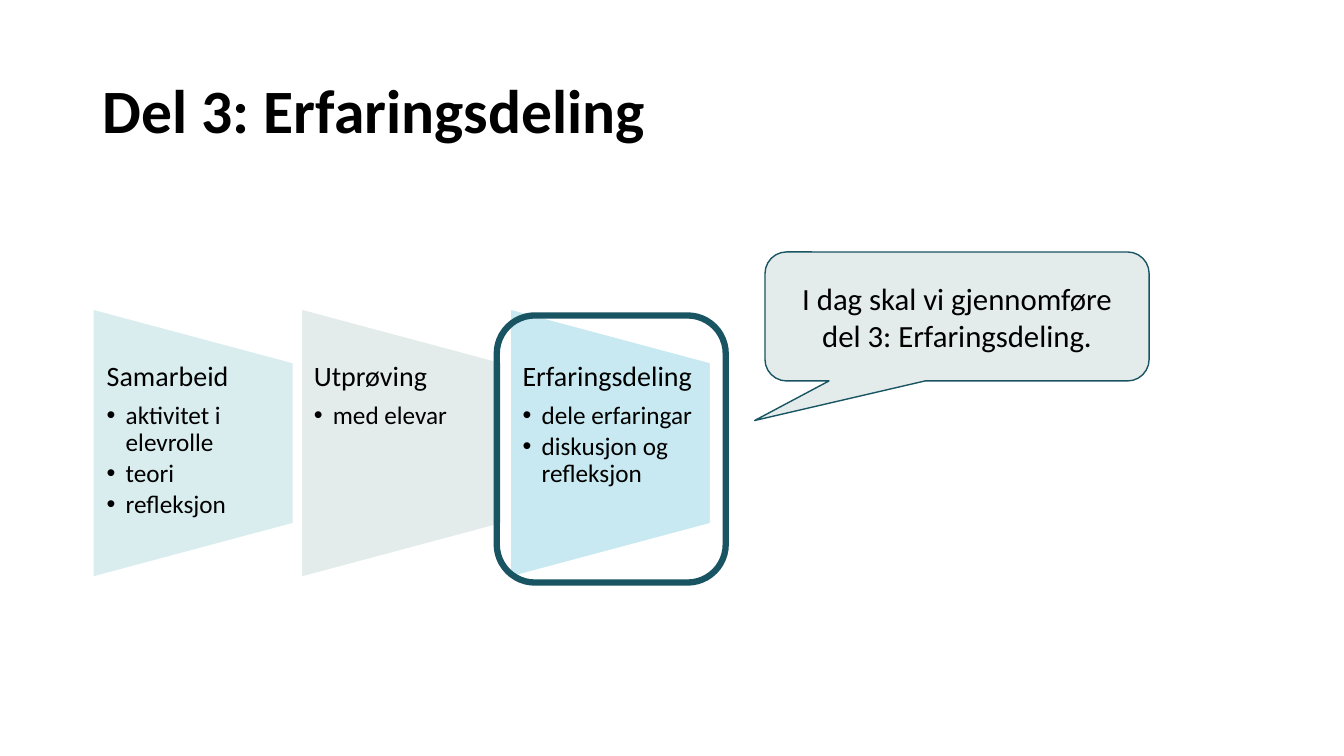
from pptx import Presentation
from pptx.dml.color import RGBColor
from pptx.enum.shapes import MSO_SHAPE
from pptx.enum.text import MSO_ANCHOR, PP_ALIGN
from pptx.oxml.ns import qn
from pptx.util import Cm, Pt
from lxml.etree import SubElement

COLOURS = {
    "text": "000000", "white": "FFFFFF", "outline": "195463",
    "mint": "D9EDEF", "grey": "E3ECEA", "sky": "C8E9F1",
}


def write(paragraph, text, size, bold=False, **layout):
    """Put one formatted run in a paragraph."""
    run = paragraph.add_run()
    run.text = text
    font_format = {"name": "Calibri", "size": Pt(size), "bold": bold}
    for target, values in ((run.font, font_format), (paragraph, layout)):
        for key, value in values.items():
            setattr(target, key, value)
    run.font.color.rgb = RGBColor.from_string(COLOURS["text"])


def draw(kind, box, fill, line, width):
    """Add a preset shape with flat fill and line; box is in cm."""
    shape = slide.shapes.add_shape(kind, *map(Cm, box))
    shape.shadow.inherit = False
    if fill:
        shape.fill.solid()
        shape.fill.fore_color.rgb = RGBColor.from_string(COLOURS[fill])
    else:
        shape.fill.background()
    shape.line.color.rgb = RGBColor.from_string(COLOURS[line])
    shape.line.width = Pt(width)
    return shape


presentation = Presentation()
presentation.slide_width, presentation.slide_height = Cm(33.87), Cm(19.05)
slide = presentation.slides.add_slide(presentation.slide_layouts[5])

# Title
heading = slide.shapes.title
heading_box = {"left": 2.34, "top": 1.02, "width": 29.21, "height": 3.68}
for side, length in heading_box.items():
    setattr(heading, side, Cm(length))
heading.text_frame.vertical_anchor = MSO_ANCHOR.MIDDLE
write(heading.text_frame.paragraphs[0], "Del 3: Erfaringsdeling", 44, bold=True,
      alignment=PP_ALIGN.LEFT, line_spacing=0.9)

# Three phases: a turned trapezoid with a heading and bullets on top
PHASES = [
    ("Samarbeid", ["aktivitet i elevrolle", "teori", "refleksjon"], "mint", 0.35),
    ("Utprøving", ["med elevar"], "grey", 0.31),
    ("Erfaringsdeling", ["dele erfaringar", "diskusjon og refleksjon"], "sky", 0.31),
]
PHASE_LEFT, PHASE_STEP = 2.34, 5.26
PHASE_WIDTH, PHASE_HEIGHT = 5.05, 6.76
TURN_SHIFT = (PHASE_HEIGHT - PHASE_WIDTH) / 2

for index, (phase, activities, colour, inset) in enumerate(PHASES):
    left = PHASE_LEFT + index * PHASE_STEP
    trapezoid = draw(MSO_SHAPE.FLOWCHART_MANUAL_OPERATION,
                     (left - TURN_SHIFT, 8.64, PHASE_HEIGHT, PHASE_WIDTH),
                     colour, "white", 1)
    trapezoid.rotation = 270

    content = slide.shapes.add_textbox(
        Cm(left), Cm(9.14), Cm(PHASE_WIDTH), Cm(4.04)).text_frame
    content_format = {
        "word_wrap": True, "margin_left": Cm(inset), "margin_right": Cm(inset),
        "margin_top": 0, "margin_bottom": 0,
    }
    for key, value in content_format.items():
        setattr(content, key, value)
    write(content.paragraphs[0], phase, 20, line_spacing=0.9, space_after=Pt(7))
    for activity in activities:
        bullet = content.add_paragraph()
        write(bullet, activity, 18, level=1, line_spacing=0.9, space_after=Pt(2.7))
        properties = bullet._p.get_or_add_pPr()
        properties.set("marL", str(Cm(0.48)))
        properties.set("indent", str(-Cm(0.48)))
        SubElement(properties, qn("a:buFont"), typeface="Arial")
        SubElement(properties, qn("a:buChar"), char="•")

# Frame around the current phase
draw(MSO_SHAPE.ROUNDED_RECTANGLE, (12.52, 7.95, 5.77, 6.73), None, "outline", 4.5)

# Callout
callout = draw(MSO_SHAPE.ROUNDED_RECTANGULAR_CALLOUT, (19.28, 6.35, 9.68, 3.25),
               "grey", "outline", 1)
for index, adjustment in enumerate((-0.527, 0.807, 0.167)):
    callout.adjustments[index] = adjustment
callout.text_frame.word_wrap = True
callout.text_frame.vertical_anchor = MSO_ANCHOR.MIDDLE
write(callout.text_frame.paragraphs[0],
      "I dag skal vi gjennomføre del 3: Erfaringsdeling.", 22,
      alignment=PP_ALIGN.CENTER)

presentation.save("out.pptx")
